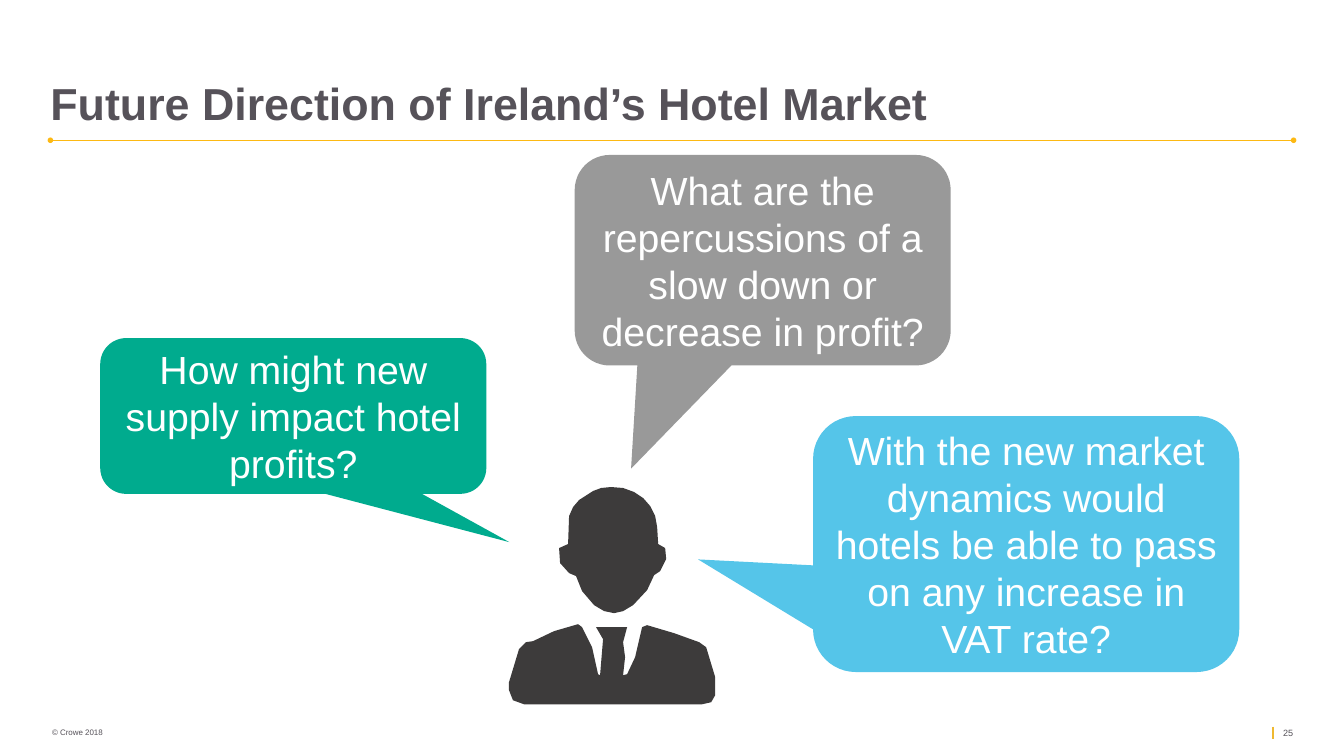
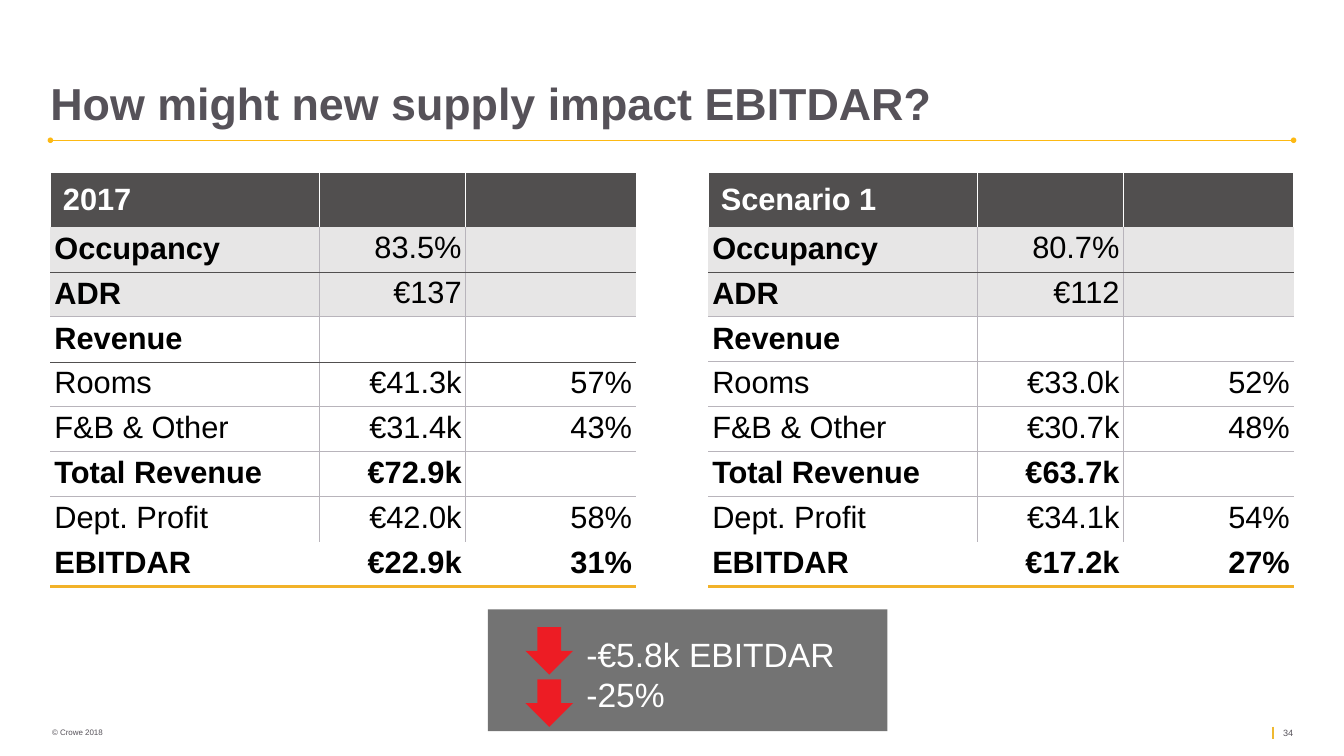
from dataclasses import dataclass

from lxml import etree
from pptx import Presentation
from pptx.dml.color import RGBColor
from pptx.enum.shapes import MSO_CONNECTOR, MSO_SHAPE
from pptx.enum.text import MSO_ANCHOR, PP_ALIGN
from pptx.oxml.ns import qn
from pptx.util import Pt

STRAIGHT = MSO_CONNECTOR.STRAIGHT
CALLOUT = MSO_SHAPE.ROUNDED_RECTANGULAR_CALLOUT
RECTANGLE = MSO_SHAPE.RECTANGLE
DOWN_ARROW = MSO_SHAPE.DOWN_ARROW
TOP, MIDDLE = MSO_ANCHOR.TOP, MSO_ANCHOR.MIDDLE
LEFT, CENTER, RIGHT = PP_ALIGN.LEFT, PP_ALIGN.CENTER, PP_ALIGN.RIGHT


@dataclass(frozen=True)
class Theme:
    font: str = "Arial"
    white: str = "FFFFFF"
    black: str = "000000"
    heading: str = "565259"
    rule: str = "FDB913"
    amber: str = "EFB931"
    total_rule: str = "F2B229"
    dark: str = "514F4F"
    band: str = "E7E6E6"
    grid: str = "B8B4BB"
    figure: str = "3D3B3B"
    green: str = "00AB8E"
    grey: str = "999999"
    blue: str = "55C5E9"
    panel: str = "737373"
    red: str = "ED1C24"
    title_size: float = 32
    question_size: float = 28
    summary_size: float = 24
    table_size: float = 22
    page_size: float = 6.5
    copyright_size: float = 5.7


THEME = Theme()


@dataclass(frozen=True)
class Box:
    left: float
    top: float
    width: float
    height: float

    def inner(self, dx, dy, width, height):
        return Box(self.left + dx, self.top + dy, width, height)

    def emu(self):
        return Pt(self.left), Pt(self.top), Pt(self.width), Pt(self.height)


MARGIN = 36
CONTENT_WIDTH = 888

HEAD_OUTLINE = [
    (102, 0), (114, 1), (125, 5), (134, 11), (141, 19), (146, 29), (148, 40),
    (149, 57), (156, 61), (157, 72), (151, 84), (145, 88), (138, 103),
    (124, 118), (114, 124), (105, 126), (95, 124), (85, 118), (73, 104),
    (67, 89), (60, 86), (51, 76), (50, 61), (59, 57), (60, 29), (64, 20),
    (70, 13), (84, 4), (92, 1),
]
SUIT_OUTLINE = [
    (15, 217), (4, 213), (0, 203), (0, 195), (10, 162), (17, 155),
    (24, 154), (45, 144), (69, 137), (73, 140), (83, 160), (89, 187),
    (91, 188), (94, 152), (87, 140), (118, 140), (114, 155),
    (116, 170), (114, 188), (118, 187), (126, 170), (133, 140), (138, 138),
    (165, 146), (190, 155), (197, 160), (206, 190), (206, 208),
    (202, 215), (193, 217),
]
PORTRAIT_UNITS = 207

BOLD_LABELS = {"Occupancy", "ADR", "Revenue", "Total Revenue", "EBITDAR"}
BOLD_VALUES = {"Total Revenue", "EBITDAR"}
CENTRED_LABELS = {"Occupancy", "ADR", "Revenue"}
BAND_ROWS = {"Occupancy", "ADR"}
COLUMN_WIDTHS = [192.2, 104.4, 121.7]
HEADER_HEIGHT, ROW_HEIGHT = 38.8, 32.1

RESULTS_2017 = [
    ("Occupancy", "83.5%", ""), ("ADR", "€137", ""), ("Revenue", "", ""),
    ("Rooms", "€41.3k", "57%"), ("F&B & Other", "€31.4k", "43%"),
    ("Total Revenue", "€72.9k", ""), ("Dept. Profit", "€42.0k", "58%"),
    ("EBITDAR", "€22.9k", "31%"),
]
RESULTS_SCENARIO = [
    ("Occupancy", "80.7%", ""), ("ADR", "€112", ""), ("Revenue", "", ""),
    ("Rooms", "€33.0k", "52%"), ("F&B & Other", "€30.7k", "48%"),
    ("Total Revenue", "€63.7k", ""), ("Dept. Profit", "€34.1k", "54%"),
    ("EBITDAR", "€17.2k", "27%"),
]


def rgb(colour):
    return RGBColor.from_string(colour)


def set_text(frame, text, size, colour, bold=False, align=LEFT):
    frame.text = text
    for paragraph in frame.paragraphs:
        paragraph.alignment = align
        for run in paragraph.runs:
            run.font.name = THEME.font
            run.font.size = Pt(size)
            run.font.bold = bold
            run.font.color.rgb = rgb(colour)


def add_label(slide, box, text, size, colour, bold=False, anchor=TOP, inset=7.2):
    frame = slide.shapes.add_textbox(*box.emu()).text_frame
    frame.word_wrap = True
    frame.vertical_anchor = anchor
    frame.margin_left = frame.margin_right = Pt(inset)
    set_text(frame, text, size, colour, bold)


def paint(shape, colour):
    """Give a shape a plain fill with no outline or shadow."""
    shape.shadow.inherit = False
    shape.fill.solid()
    shape.fill.fore_color.rgb = rgb(colour)
    shape.line.fill.background()


def add_block(slide, kind, box, colour):
    block = slide.shapes.add_shape(kind, *box.emu())
    paint(block, colour)
    return block


def add_rule(slide, start, end, colour, width, oval_ends=False):
    rule = slide.shapes.add_connector(STRAIGHT, *map(Pt, start + end))
    rule.line.color.rgb = rgb(colour)
    rule.line.width = Pt(width)
    properties = rule._element.spPr
    if oval_ends:
        line = properties.find(qn("a:ln"))
        for tag in ("a:headEnd", "a:tailEnd"):
            etree.SubElement(line, qn(tag), type="oval", w="sm", len="sm")
    etree.SubElement(properties, qn("a:effectLst"))


def add_frame(deck, title, page):
    """Start a slide with its title, title rule and footer."""
    slide = deck.slides.add_slide(deck.slide_layouts[6])
    add_label(slide, Box(MARGIN, 50.2, CONTENT_WIDTH, 40), title,
              THEME.title_size, THEME.heading, bold=True, inset=0)
    add_rule(slide, (MARGIN, 100.2), (MARGIN + CONTENT_WIDTH, 100.2),
             THEME.rule, 1, oval_ends=True)
    add_label(slide, Box(30.2, 516, 190, 14.4), "© Crowe 2018",
              THEME.copyright_size, THEME.heading)
    add_rule(slide, (909.4, 519), (909.4, 528), THEME.amber, 1.5)
    add_label(slide, Box(909.4, 516, 47.5, 15), page,
              THEME.page_size, THEME.heading)
    return slide


def add_question(slide, box, text, colour, pointer):
    callout = add_block(slide, CALLOUT, box, colour)
    callout.adjustments[0], callout.adjustments[1] = pointer
    frame = callout.text_frame
    frame.word_wrap = True
    frame.vertical_anchor = MIDDLE
    set_text(frame, text, THEME.question_size, THEME.white, align=CENTER)


def add_portrait(slide, box):
    scale = Pt(box.width) / PORTRAIT_UNITS
    for outline in (SUIT_OUTLINE, HEAD_OUTLINE):
        builder = slide.shapes.build_freeform(*outline[0], scale=scale)
        builder.add_line_segments(outline[1:], close=True)
        paint(builder.convert_to_shape(Pt(box.left), Pt(box.top)), THEME.figure)


def set_borders(cell, **borders):
    """Set sides L, R, T, B to (colour, width); a side left out has no line."""
    properties = cell._tc.get_or_add_tcPr()
    for side in "LRTB":
        line = etree.SubElement(properties, qn("a:ln" + side))
        if borders.get(side):
            colour, width = borders[side]
            line.set("w", str(Pt(width)))
            fill = etree.SubElement(line, qn("a:solidFill"))
            etree.SubElement(fill, qn("a:srgbClr"), val=colour)
        else:
            etree.SubElement(line, qn("a:noFill"))


def fill_cell(cell, text, fill, colour, bold, align, inset=2.88):
    cell.fill.solid()
    cell.fill.fore_color.rgb = rgb(fill)
    cell.margin_left = Pt(inset)
    cell.margin_right = cell.margin_top = cell.margin_bottom = Pt(2.88)
    if text:
        set_text(cell.text_frame, text, THEME.table_size, colour, bold, align)


def add_results(slide, box, heading, results, revenue_rule):
    table = slide.shapes.add_table(
        len(results) + 1, len(COLUMN_WIDTHS), *box.emu()).table
    table.first_row = table.horz_banding = False
    for column, width in zip(table.columns, COLUMN_WIDTHS):
        column.width = Pt(width)
    for row in table.rows:
        row.height = Pt(ROW_HEIGHT)
    table.rows[0].height = Pt(HEADER_HEIGHT)

    thin, dark, white = (THEME.grid, 0.5), (THEME.dark, 0.25), (THEME.white, 0.75)
    rules = {"Occupancy": dark, "Revenue": revenue_rule,
             "Dept. Profit": None, "EBITDAR": (THEME.total_rule, 2.25)}
    last = len(COLUMN_WIDTHS) - 1

    for j, text in enumerate((heading, "", "")):
        cell = table.cell(0, j)
        set_borders(cell, L=white, R=white, T=white)
        fill_cell(cell, text, THEME.dark, THEME.white, True, LEFT, inset=9)
        cell.vertical_anchor = MIDDLE

    above = None
    for i, result in enumerate(results, start=1):
        name = result[0]
        below = rules.get(name, thin)
        divider = None if name == "EBITDAR" else thin
        fill = THEME.band if name in BAND_ROWS else THEME.white
        for j, text in enumerate(result):
            cell = table.cell(i, j)
            set_borders(cell, L=divider if j else None,
                        R=divider if j < last else None, T=above, B=below)
            bold = name in (BOLD_VALUES if j else BOLD_LABELS)
            fill_cell(cell, text, fill, THEME.black, bold, RIGHT if j else LEFT)
            if text in CENTRED_LABELS:
                cell.vertical_anchor = MIDDLE
        above = below


def add_summary(slide, box, lines):
    add_block(slide, RECTANGLE, box, THEME.panel)
    for i in range(len(lines)):
        add_block(slide, DOWN_ARROW, box.inner(26.8, 12.6 + 37.3 * i, 34, 34),
                  THEME.red)
    add_label(slide, box.inner(63.3, 13.3, 222, 65.5), "\n".join(lines),
              THEME.summary_size, THEME.white, anchor=MIDDLE)


def build_questions(deck):
    slide = add_frame(deck, "Future Direction of Ireland’s Hotel Market", "25")
    add_question(slide, Box(71.6, 241.5, 275.8, 111.3),
                 "How might new supply impact hotel profits?",
                 THEME.green, (0.56, 0.81))
    add_portrait(slide, Box(363.6, 347.9, 148, 155))
    add_question(slide, Box(410.5, 110.7, 268.6, 150.4),
                 "What are the repercussions of a slow down or decrease in profit?",
                 THEME.grey, (-0.35, 0.99))
    add_question(slide, Box(580.8, 297.2, 304.4, 182.8),
                 "With the new market dynamics would hotels be able to pass"
                 " on any increase in VAT rate?",
                 THEME.blue, (-0.77, 0.06))


def build_comparison(deck):
    slide = add_frame(deck, "How might new supply impact EBITDAR?", "34")
    width = sum(COLUMN_WIDTHS)
    height = HEADER_HEIGHT + ROW_HEIGHT * len(RESULTS_2017)
    left_table = Box(MARGIN, 123.1, width, height)
    right_table = left_table.inner(CONTENT_WIDTH - width + 0.2, 0, width, height)
    add_results(slide, left_table, "2017", RESULTS_2017, (THEME.dark, 0.25))
    add_results(slide, right_table, "Scenario 1", RESULTS_SCENARIO,
                (THEME.grid, 0.5))
    add_summary(slide, Box(348.5, 435.3, 285.4, 87), ["-€5.8k EBITDAR", "-25%"])


def main():
    deck = Presentation()
    deck.slide_width, deck.slide_height = Pt(960), Pt(540)
    build_questions(deck)
    build_comparison(deck)
    deck.save("out.pptx")


if __name__ == "__main__":
    main()
